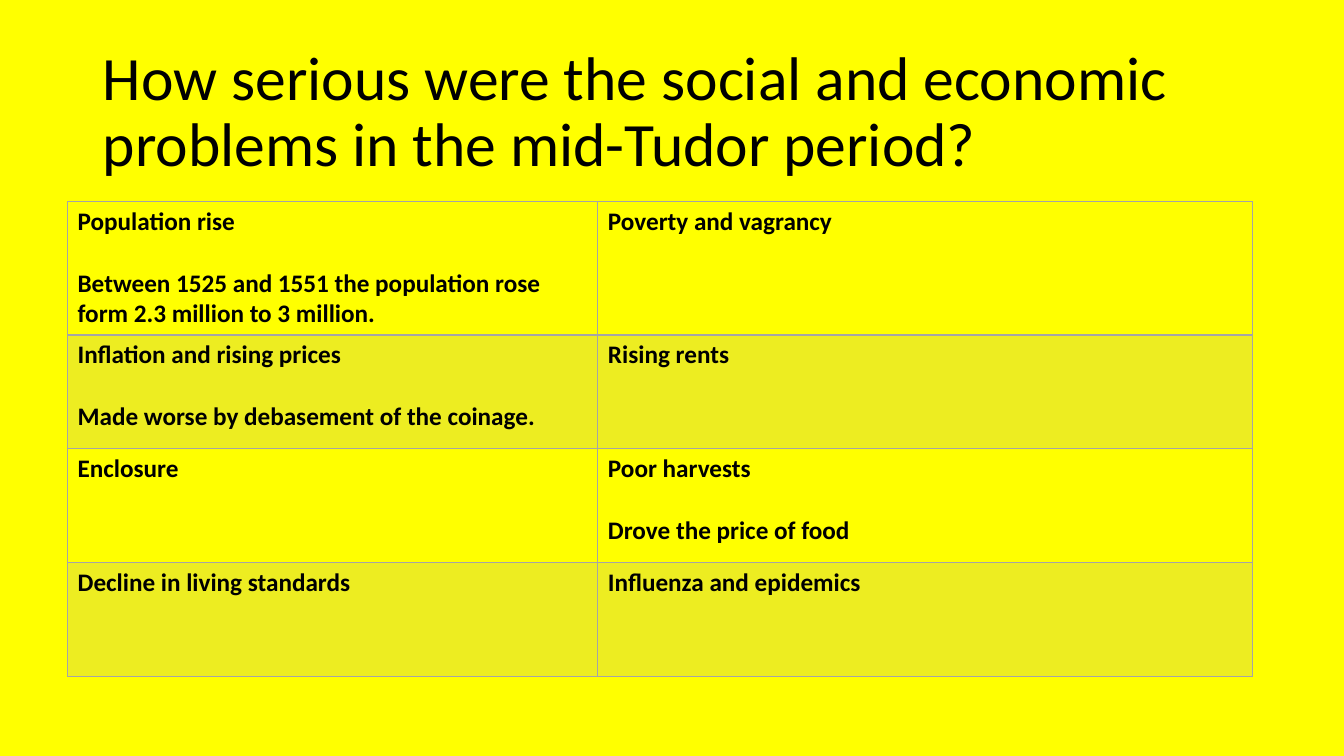
from lxml import etree
from pptx import Presentation
from pptx.dml.color import RGBColor
from pptx.enum import text
from pptx.oxml import ns
from pptx.util import Inches, Pt

YELLOW = RGBColor(0xFF, 0xFF, 0x00)
BLACK = RGBColor(0x00, 0x00, 0x00)
GREY = RGBColor(0xA5, 0xA5, 0xA5)
FONT = "Calibri"
TITLE = "How serious were the social and economic problems in the mid-Tudor period?"
PROBLEMS = [
    (["Population rise",
      "Between 1525 and 1551 the population rose form 2.3 million to 3 million."],
     ["Poverty and vagrancy"]),
    (["Inflation and rising prices", "Made worse by debasement of the coinage."],
     ["Rising rents"]),
    (["Enclosure"], ["Poor harvests", "Drove the price of food"]),
    (["Decline in living standards"], ["Influenza and epidemics"]),
]
COLUMN_WIDTHS = (5.26, 6.49)
ROW_HEIGHT = 1.13


def style_runs(paragraph, size, bold):
    """Give every run of a paragraph the slide's font."""
    for run in paragraph.runs:
        run.font.name = FONT
        run.font.size = Pt(size)
        run.font.bold = bold
        run.font.color.rgb = BLACK


def set_title(slide):
    """Place and format the title placeholder."""
    title = slide.shapes.title
    title.left, title.top = Inches(0.92), Inches(0.4)
    title.width, title.height = Inches(11.5), Inches(1.45)
    frame = title.text_frame
    frame.text = TITLE
    frame.word_wrap = True
    frame.auto_size = text.MSO_AUTO_SIZE.NONE
    frame.vertical_anchor = text.MSO_ANCHOR.MIDDLE
    paragraph = frame.paragraphs[0]
    paragraph.alignment = text.PP_ALIGN.LEFT
    paragraph.line_spacing = 0.9
    style_runs(paragraph, 44, False)


def set_border(cell, side, width):
    """Draw one grey border of a cell."""
    properties = cell._tc.get_or_add_tcPr()
    line = etree.SubElement(properties, ns.qn(f"a:ln{side}"), w=str(Pt(width)))
    fill = etree.SubElement(line, ns.qn("a:solidFill"))
    etree.SubElement(fill, ns.qn("a:srgbClr"), val=str(GREY))


def set_fill(cell, shaded):
    """Shade a cell with translucent grey or leave it clear."""
    if not shaded:
        cell.fill.background()
        return
    cell.fill.solid()
    cell.fill.fore_color.rgb = GREY
    color = cell._tc.tcPr.find(".//" + ns.qn("a:solidFill") + "[last()]")
    color = cell._tc.tcPr.find(ns.qn("a:solidFill") + "/" + ns.qn("a:srgbClr"))
    etree.SubElement(color, ns.qn("a:alpha"), val="20000")


def write_cell(cell, lines):
    """Write a heading and its remark, set apart by one line of space."""
    frame = cell.text_frame
    frame.text = "\n".join(lines)
    for index, paragraph in enumerate(frame.paragraphs):
        paragraph.space_before = Pt(22 if index else 0)
        style_runs(paragraph, 18, True)


def add_problem_table(slide):
    """Add the table of social and economic problems."""
    table = slide.shapes.add_table(
        len(PROBLEMS), len(COLUMN_WIDTHS), Inches(0.67), Inches(2),
        Inches(sum(COLUMN_WIDTHS)), Inches(ROW_HEIGHT * len(PROBLEMS))).table
    table.first_row = False
    table.horz_banding = False
    for column, width in zip(table.columns, COLUMN_WIDTHS):
        column.width = Inches(width)
    for row_index, problems in enumerate(PROBLEMS):
        table.rows[row_index].height = Inches(ROW_HEIGHT)
        top_width = 2 if row_index == 1 else 1
        bottom_width = 2 if row_index == 0 else 1
        for column_index, lines in enumerate(problems):
            cell = table.cell(row_index, column_index)
            write_cell(cell, lines)
            for side, width in zip("LRTB", (1, 1, top_width, bottom_width)):
                set_border(cell, side, width)
            set_fill(cell, row_index % 2 == 1)


def main():
    """Build and save the slide."""
    presentation = Presentation()
    presentation.slide_width = Inches(13.33)
    presentation.slide_height = Inches(7.5)
    slide = presentation.slides.add_slide(presentation.slide_layouts[5])
    slide.background.fill.solid()
    slide.background.fill.fore_color.rgb = YELLOW
    set_title(slide)
    add_problem_table(slide)
    presentation.save("out.pptx")


if __name__ == "__main__":
    main()
